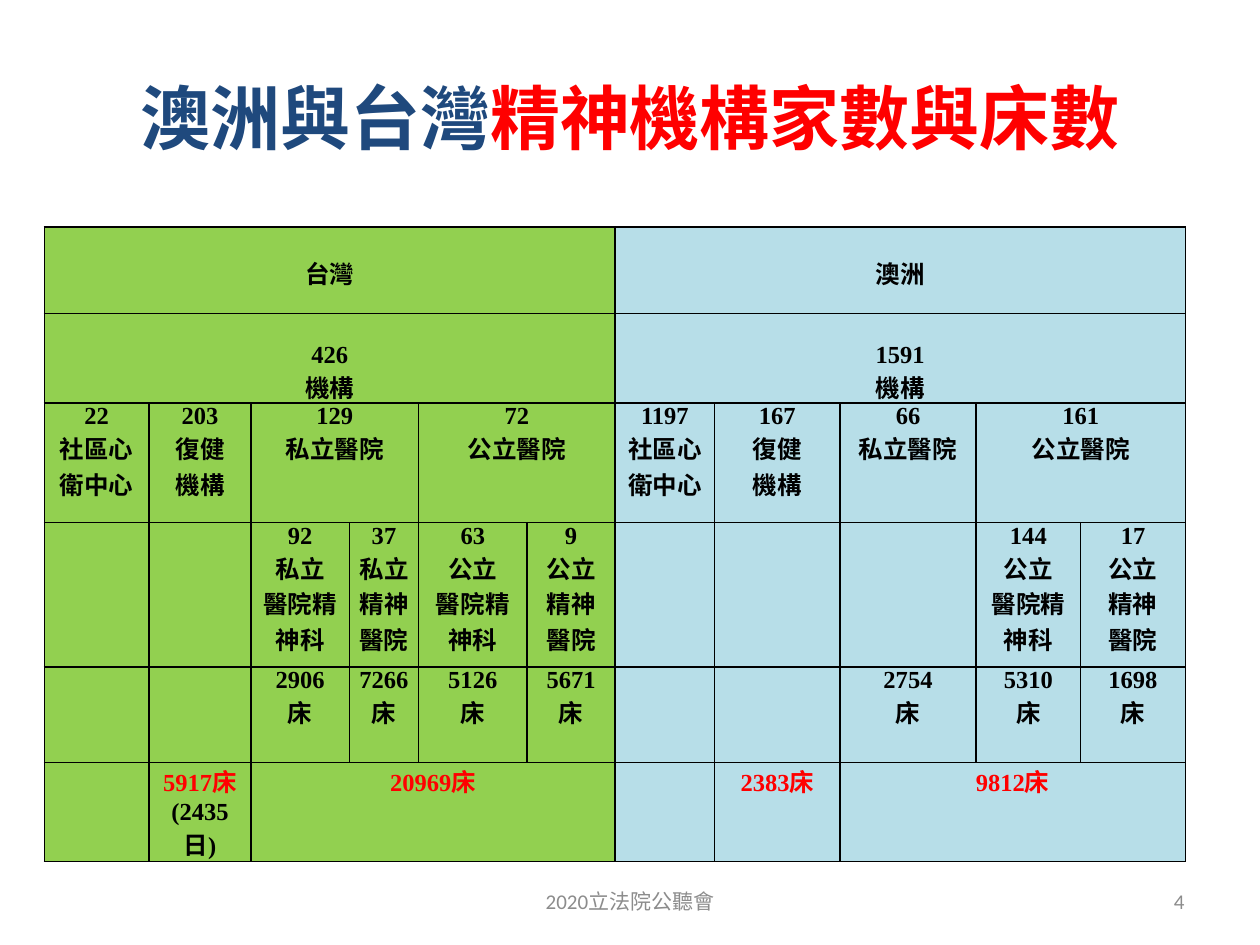
from lxml.etree import SubElement
from pptx import Presentation
from pptx.dml.color import RGBColor
from pptx.enum.text import MSO_ANCHOR as Anchor, PP_ALIGN as Align
from pptx.oxml.ns import qn
from pptx.util import Pt

NAVY = RGBColor(0x1F, 0x49, 0x7D)
RED = RGBColor(0xFF, 0x00, 0x00)
BLACK = RGBColor(0x00, 0x00, 0x00)
GRAY = RGBColor(0x8C, 0x8C, 0x8C)
GREEN = RGBColor(0x92, 0xD0, 0x50)
BLUE = RGBColor(0xB7, 0xDE, 0xE8)
CJK_FONT = "Noto Sans CJK SC"

COLUMN_WIDTHS = [59.8, 58.3, 56.2, 39.6, 61.9, 50.4, 56.9, 71.6, 77.8, 59.8, 59.8]
ROW_HEIGHTS = [49.5, 51.1, 68.4, 82.6, 54.7, 56.5]
FIRST_AUSTRALIA_COLUMN = 6
HEADER_ROWS = 2

TABLE_ROWS = [
    [(0, 6, "台灣"), (6, 5, "澳洲")],
    [(0, 6, "426\n機構"), (6, 5, "1591\n機構")],
    [(0, 1, "22\n社區心衛中心"), (1, 1, "203\n復健\n機構"), (2, 2, "129\n私立醫院"),
     (4, 2, "72\n公立醫院"), (6, 1, "1197\n社區心衛中心"), (7, 1, "167\n復健\n機構"),
     (8, 1, "66\n私立醫院"), (9, 2, "161\n公立醫院")],
    [(2, 1, "92\n私立\n醫院精神科"), (3, 1, "37\n私立精神醫院"),
     (4, 1, "63\n公立\n醫院精神科"), (5, 1, "9\n公立精神醫院"),
     (9, 1, "144\n公立\n醫院精神科"), (10, 1, "17\n公立\n精神\n醫院")],
    [(2, 1, "2906\n床"), (3, 1, "7266\n床"), (4, 1, "5126\n床"), (5, 1, "5671床"),
     (8, 1, "2754\n床"), (9, 1, "5310\n床"), (10, 1, "1698\n床")],
    [(1, 1, "5917床\n(2435日)"), (2, 4, "20969床"), (7, 1, "2383床"), (8, 3, "9812床")],
]


def style_span(span, font, size, color, bold=False):
    """Set the Latin and East Asian fonts, size, colour and weight of a run."""
    span.font.name = font
    span.font.size = Pt(size)
    span.font.bold = bold
    span.font.color.rgb = color
    SubElement(span.font._element, qn("a:ea"), typeface=CJK_FONT)


def add_text(page, box, spans, font, size, align, bold=False):
    """Place one middle-anchored line of coloured spans in the given box."""
    frame = page.shapes.add_textbox(*map(Pt, box)).text_frame
    frame.word_wrap = True
    frame.vertical_anchor = Anchor.MIDDLE
    para = frame.paragraphs[0]
    para.alignment = align
    for text, color in spans:
        span = para.add_run()
        span.text = text
        style_span(span, font, size, color, bold)


def add_borders(cell):
    """Draw a thin black line on every side of a cell."""
    properties = cell._tc.get_or_add_tcPr()
    for side in ("lnL", "lnR", "lnT", "lnB"):
        line = SubElement(properties, qn(f"a:{side}"), w=str(Pt(1)))
        fill = SubElement(line, qn("a:solidFill"))
        SubElement(fill, qn("a:srgbClr"), val=str(BLACK))


def fill_cell(cell, text, is_total):
    """Write centred bold lines in a cell, with bed totals in red."""
    cell.text_frame.text = text
    for index, para in enumerate(cell.text_frame.paragraphs):
        para.alignment = Align.CENTER
        color = RED if is_total and index == 0 else BLACK
        for span in para.runs:
            style_span(span, "Times New Roman", 14, color, True)


def add_comparison_table(page, box):
    """Build the table comparing institutions and beds in the given box."""
    table = page.shapes.add_table(
        len(ROW_HEIGHTS), len(COLUMN_WIDTHS), *map(Pt, box)).table
    for column, width in zip(table.columns, COLUMN_WIDTHS):
        column.width = Pt(width)
    for row_index, (row, height) in enumerate(zip(table.rows, ROW_HEIGHTS)):
        row.height = Pt(height)
        for column_index, cell in enumerate(row.cells):
            cell.margin_left = cell.margin_right = Pt(5)
            cell.margin_top = Pt(16 if row_index < HEADER_ROWS else 0)
            cell.margin_bottom = Pt(0)
            add_borders(cell)
            cell.fill.solid()
            is_taiwan = column_index < FIRST_AUSTRALIA_COLUMN
            cell.fill.fore_color.rgb = GREEN if is_taiwan else BLUE
    last_row = len(TABLE_ROWS) - 1
    for row_index, entries in enumerate(TABLE_ROWS):
        for first, width, text in entries:
            cell = table.cell(row_index, first)
            if width > 1:
                cell.merge(table.cell(row_index, first + width - 1))
            fill_cell(cell, text, row_index == last_row)


def add_footer(page, box):
    """Place the event name and the page number in the footer band."""
    left, top, width, height = box
    add_text(page, box, [("2020立法院公聽會", GRAY)], "Calibri", 12, Align.CENTER)
    add_text(page, (left + width - 168, top, 168, height), [("4", GRAY)],
             "Calibri", 12, Align.RIGHT)


def main():
    """Build the slide and save the deck."""
    deck = Presentation()
    deck.slide_width, deck.slide_height = Pt(720), Pt(540)
    page = deck.slides.add_slide(deck.slide_layouts[6])
    add_text(page, (36, 21.6, 648, 90),
             [("澳洲與台灣", NAVY), ("精神機構家數與床數", RED)],
             CJK_FONT, 40, Align.CENTER, True)
    add_comparison_table(page, (25.4, 129.6, sum(COLUMN_WIDTHS), sum(ROW_HEIGHTS)))
    add_footer(page, (36, 500.5, 648, 28.8))
    deck.save("out.pptx")


if __name__ == "__main__":
    main()
